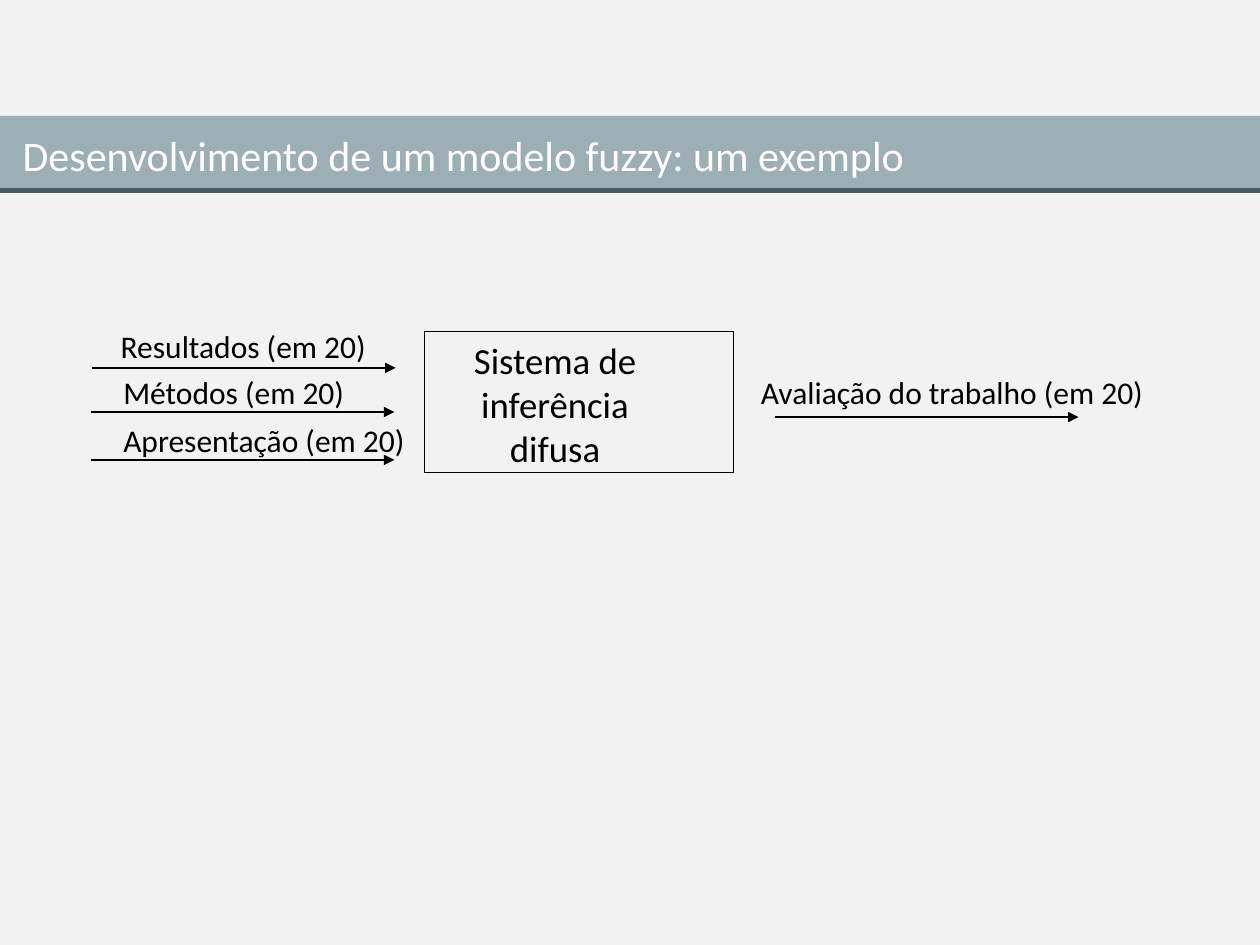
"""Build a slide showing a fuzzy inference system with three inputs and one output."""
import lxml.etree
import pptx
import pptx.dml.color
import pptx.enum.shapes
import pptx.enum.text
import pptx.oxml.ns
import pptx.util

THEME = {
    "font": "Calibri",
    "background": "F2F2F2", "band": "9BAFB5", "rule": "475B61",
    "ink": "000000", "title": "FFFFFF",
    "title_size": 24, "system_size": 21, "label_size": 18,
    "thin": 0.75, "thick": 3,
}
ALIGN = pptx.enum.text.PP_ALIGN
COLUMNS, ROWS = 100, 75

deck = pptx.Presentation()
deck.slide_width = pptx.util.Inches(10)
deck.slide_height = pptx.util.Inches(7.5)
column = deck.slide_width / COLUMNS
row = deck.slide_height / ROWS
slide = deck.slides.add_slide(deck.slide_layouts[5])


def write(holder, text, size, color, align=ALIGN.LEFT, wrap=False):
    frame = holder.text_frame
    frame.text = text
    frame.word_wrap = wrap
    frame.auto_size = pptx.enum.text.MSO_AUTO_SIZE.NONE
    frame.vertical_anchor = pptx.enum.text.MSO_ANCHOR.TOP
    paragraph = frame.paragraphs[0]
    paragraph.alignment = align
    paragraph.font.name = THEME["font"]
    paragraph.font.size = pptx.util.Pt(THEME[size])
    paragraph.font.color.rgb = pptx.dml.color.RGBColor.from_string(THEME[color])


def draw_line(left, right, level, color, weight, arrow=False):
    connector = slide.shapes.add_connector(
        pptx.enum.shapes.MSO_CONNECTOR.STRAIGHT,
        int(left * column), int(level * row), int(right * column), int(level * row))
    connector.line.color.rgb = pptx.dml.color.RGBColor.from_string(THEME[color])
    connector.line.width = pptx.util.Pt(THEME[weight])
    properties = connector._element.find(pptx.oxml.ns.qn("p:spPr"))
    if arrow:
        outline = properties.find(pptx.oxml.ns.qn("a:ln"))
        lxml.etree.SubElement(outline, pptx.oxml.ns.qn("a:tailEnd"), type="triangle")
    lxml.etree.SubElement(properties, pptx.oxml.ns.qn("a:effectLst"))


slide.background.fill.solid()
slide.background.fill.fore_color.rgb = pptx.dml.color.RGBColor.from_string(THEME["background"])

system = slide.shapes.add_shape(
    pptx.enum.shapes.MSO_SHAPE.RECTANGLE,
    int(33.7 * column), int(26.3 * row), int(24.5 * column), int(11.2 * row))
system.shadow.inherit = False
system.fill.background()
system.line.color.rgb = pptx.dml.color.RGBColor.from_string(THEME["ink"])
system.line.width = pptx.util.Pt(THEME["thin"])

system_name = slide.shapes.add_textbox(
    int(35.8 * column), int(26.3 * row), int(16.5 * column), int(11.6 * row))
write(system_name, "Sistema de inferência difusa", "system_size", "ink", ALIGN.CENTER, True)

flows = [
    ("Resultados (em 20)", 8.6, 25.5, 21.8, 7.3, 29.2),
    ("Métodos (em 20)", 8.8, 29.1, 19.8, 7.2, 32.7),
    ("Apresentação (em 20)", 8.8, 32.9, 24.8, 7.2, 36.5),
    ("Avaliação do trabalho (em 20)", 59.4, 29.1, 32.8, 61.5, 33.1),
]
for name, left, top, width, start, level in flows:
    label = slide.shapes.add_textbox(
        int(left * column), int(top * row), int(width * column), int(4 * row))
    write(label, name, "label_size", "ink")
    draw_line(start, start + 24.1, level, "ink", "thin", arrow=True)

band = slide.shapes.add_shape(
    pptx.enum.shapes.MSO_SHAPE.RECTANGLE,
    0, int(9.2 * row), deck.slide_width, int(5.9 * row))
band.shadow.inherit = False
band.fill.solid()
band.fill.fore_color.rgb = pptx.dml.color.RGBColor.from_string(THEME["band"])
band.line.fill.background()
draw_line(0, COLUMNS, 15.1, "rule", "thick")

title = slide.shapes.title
title.left, title.top = int(0.8 * column), int(9.8 * row)
title.width, title.height = int(72.5 * column), int(5 * row)
write(title, "Desenvolvimento de um modelo fuzzy: um exemplo", "title_size", "title")
slide.shapes._spTree.append(title._element)

deck.save("out.pptx")
